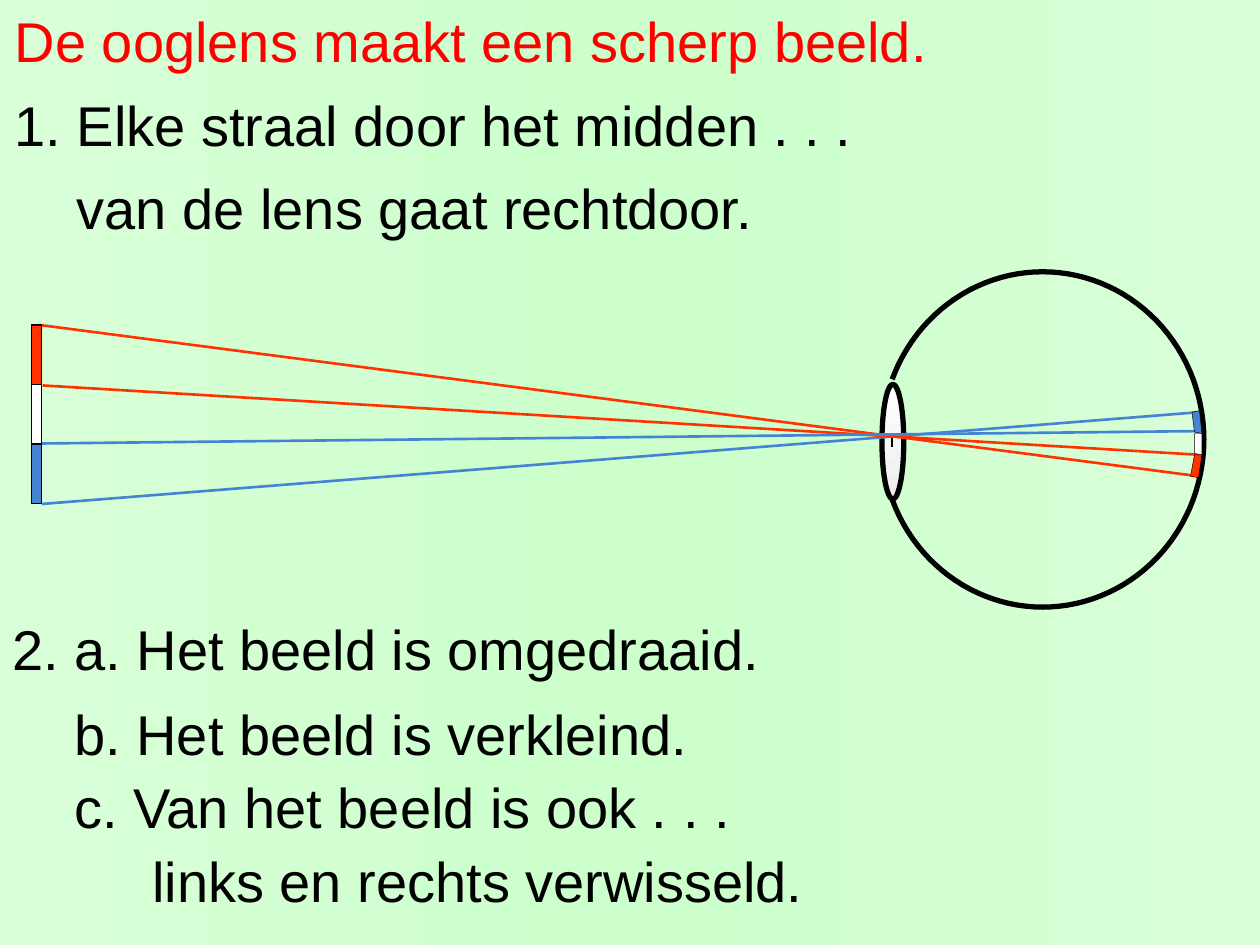
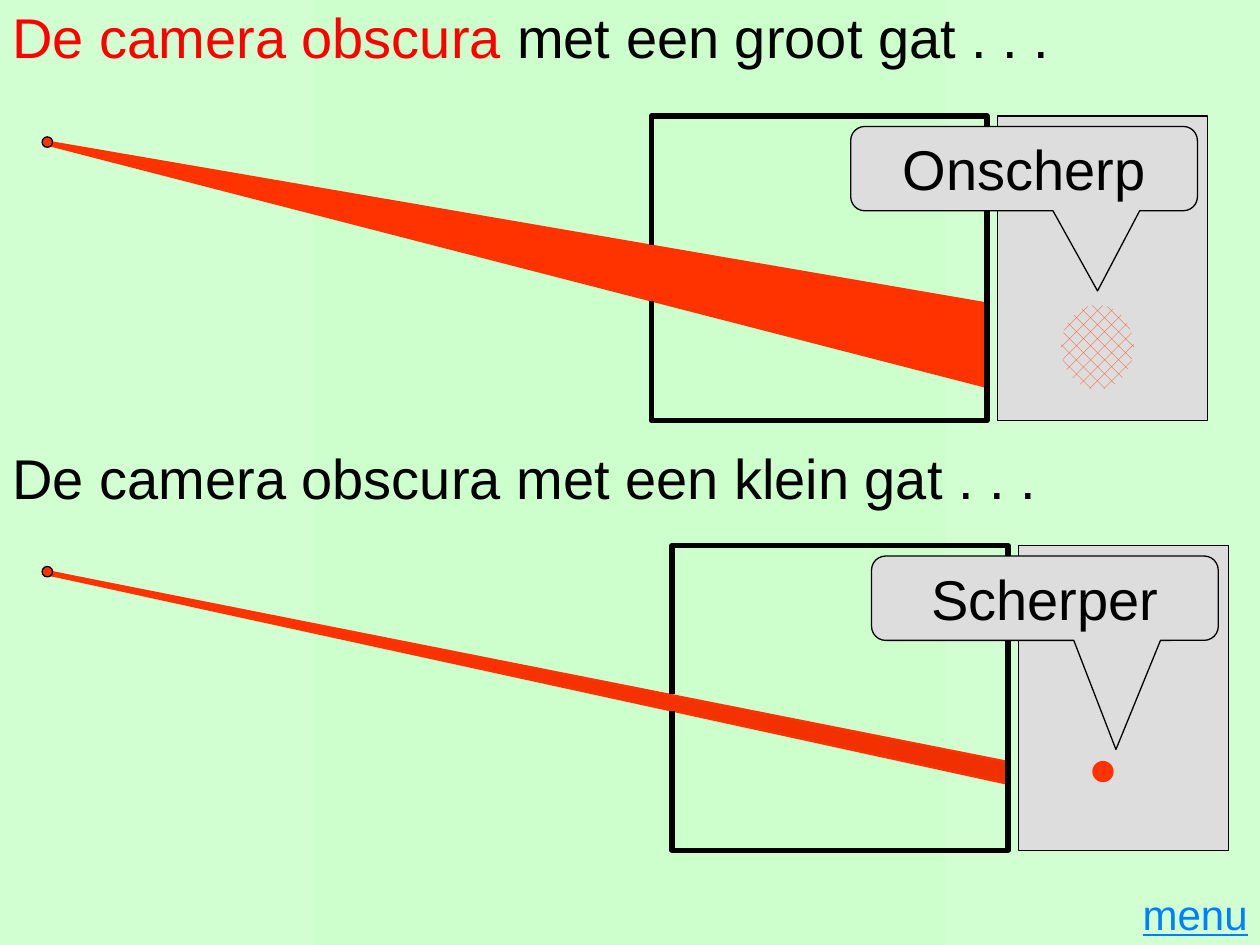
from math import cos, radians, sin

from lxml.etree import SubElement
from pptx import Presentation
from pptx.dml.color import RGBColor as RGB
from pptx.enum.dml import MSO_PATTERN as PATTERN
from pptx.enum.shapes import MSO_CONNECTOR as LINK, MSO_SHAPE as SHAPE
from pptx.enum.text import MSO_ANCHOR as ANCHOR, PP_ALIGN as ALIGN
from pptx.oxml.ns import qn
from pptx.util import Cm, Pt

HUES = {
    "black": "000000", "white": "FFFFFF", "title": "FF0000", "red": "FF3300",
    "blue": "4584D3", "gray": "DDDDDD", "pale": "EDEDED", "link": "0080FF",
    "mint": "CCFFCC", "edge1": "D8FFD8", "edge2": "D1FFD1",
    "deep1": "FC3200", "deep2": "F03000",
}
FONT = "Arial"
WIDE, HIGH = 25.4, 19.05

LINES = [
    (0.05, 0, "De ooglens maakt een scherp beeld.", "title"),
    (0.05, 1.7, "1. Elke straal door het midden . . .", "black"),
    (1.3, 3.38, "van de lens gaat rechtdoor.", "black"),
    (0, 12.27, "2. a. Het beeld is omgedraaid.", "black"),
    (1.25, 13.97, "b. Het beeld is verkleind.", "black"),
    (1.25, 15.44, "c. Van het beeld is ook . . .", "black"),
    (2.82, 16.94, "links en rechts verwisseld.", "black"),
]
EYE = (21.02, 8.86, 3.25, 3.38)
LENS = (17.78, 7.75, 0.44, 2.31)
CROSS = [((17.98, 8.81), (17.98, 9.02)), ((17.88, 8.81), (18.08, 8.81))]
RAYS = [
    ((0.79, 6.55), (24.16, 9.6), "red"),
    ((0.84, 10.16), (24.16, 8.31), "blue"),
    ((0.86, 7.77), (24.21, 9.17), "red"),
    ((0.84, 8.94), (24.21, 8.69), "blue"),
]
BAR = (0.64, 6.55, 0.2, 1.2)
FLAG = ["red", "white", "blue"]
IMAGE = [
    ("red", [(24, 9.6), (24.08, 9.17), (24.23, 9.17), (24.16, 9.63)]),
    ("white", [(24.08, 9.14), (24.08, 8.74), (24.23, 8.74), (24.23, 9.17)]),
    ("blue", [(24.08, 8.71), (24.03, 8.31), (24.18, 8.28), (24.23, 8.74)]),
]

CAMERAS = [
    {"title": [("De camera obscura ", "title"), ("met een groot gat . . .", "black")],
     "head": 0, "left": 13.13, "top": 2.34, "hole": (4.93, 6.07), "hits": (6.15, 7.77),
     "deep": "deep1", "spot": (21.39, 6.15, 1.47, 1.7), "blur": True,
     "label": "Onscherp", "tip": (0.212, 1.451)},
    {"title": [("De camera obscura met een klein gat . . .", "black")],
     "head": 8.89, "left": 13.55, "top": 11, "hole": (14, 14.33), "hits": (15.39, 15.77),
     "deep": "deep2", "spot": (22.02, 15.34, 0.43, 0.43), "blur": False,
     "label": "Scherper", "tip": (0.205, 1.794)},
]
BOX = (6.77, 6.14)
START = 0.97


def hue(name):
    return RGB.from_string(HUES[name])


def blend(fill, first, last, angle):
    fill.gradient()
    fill.gradient_angle = angle
    for stop, name in zip(fill.gradient_stops, (first, last)):
        stop.color.rgb = hue(name)


def page(deck, edge):
    slide = deck.slides.add_slide(deck.slide_layouts[6])
    blend(slide.background.fill, edge, edge, 0)
    stops = slide.element.find(".//" + qn("a:gsLst"))
    mid = SubElement(stops, qn("a:gs"), pos="50000")
    SubElement(mid, qn("a:srgbClr"), val=HUES["mint"])
    stops.insert(1, mid)
    return slide


def style(run, name, size):
    run.font.name = FONT
    run.font.size = Pt(size)
    run.font.color.rgb = hue(name)


def write(slide, area, parts, size=32, anchor=ANCHOR.TOP):
    frame = slide.shapes.add_textbox(*map(Cm, area)).text_frame
    frame.word_wrap = True
    frame.vertical_anchor = anchor
    para = frame.paragraphs[0]
    for text, name in parts:
        run = para.add_run()
        run.text = text
        style(run, name, size)
    return para


def paint(shape, fill=None, line=None, width=0.75):
    shape.shadow.inherit = False
    if fill:
        shape.fill.solid()
        shape.fill.fore_color.rgb = hue(fill)
    else:
        shape.fill.background()
    if line:
        shape.line.color.rgb = hue(line)
        shape.line.width = Pt(width)
    else:
        shape.line.fill.background()
    return shape


def put(slide, kind, area, *look):
    return paint(slide.shapes.add_shape(kind, *map(Cm, area)), *look)


def trace(slide, dots, *look, close=True):
    dots = [(Cm(x), Cm(y)) for x, y in dots]
    form = slide.shapes.build_freeform(*dots[0])
    form.add_line_segments(dots[1:], close=close)
    return paint(form.convert_to_shape(), *look)


def ray(slide, head, tail, name, width):
    line = slide.shapes.add_connector(LINK.STRAIGHT, *map(Cm, head + tail))
    line.line.color.rgb = hue(name)
    line.line.width = Pt(width)
    SubElement(line.element.spPr, qn("a:effectLst"))


def draw_eye(slide):
    midx, midy, radx, rady = EYE
    arc = [(midx + radx * cos(radians(a)), midy + rady * sin(radians(a)))
           for a in range(-159, 160, 3)]
    trace(slide, arc, None, "black", 3, close=False)
    lens = put(slide, SHAPE.OVAL, LENS, "white", "black", 3)
    blend(lens.fill, "white", "pale", 270)
    for head, tail in CROSS:
        ray(slide, head, tail, "black", 0.75)
    for head, tail, name in RAYS:
        ray(slide, head, tail, name, 1.5)
    left, top, wide, high = BAR
    for i, name in enumerate(FLAG):
        put(slide, SHAPE.RECTANGLE, (left, top + i * high, wide, high), name, "black")
    for name, dots in IMAGE:
        trace(slide, dots, name, "black", 0.25)
    for left, top, text, name in LINES:
        write(slide, (left, top, WIDE - left, 1.62), [(text, name)])


def draw_camera(slide, cam):
    left, top = cam["left"], cam["top"]
    wide, high = BOX
    right, base = left + wide, top + high
    start = (START, top + 0.55)
    ends = [(right, y) for y in cam["hits"]]
    write(slide, (0, cam["head"], WIDE, 1.47), cam["title"], anchor=ANCHOR.MIDDLE)
    for end in ends:
        ray(slide, start, end, "red", 3)
    beam = trace(slide, [start] + ends, "red")
    blend(beam.fill, "red", cam["deep"], 0)
    put(slide, SHAPE.OVAL, (0.85, top + 0.42, 0.21, 0.21), "red", "black")
    put(slide, SHAPE.RECTANGLE, (right + 0.21, top, 4.24, high), "gray", "black")
    spot = put(slide, SHAPE.OVAL, cam["spot"], "red")
    if cam["blur"]:
        spot.fill.patterned()
        spot.fill.pattern = PATTERN.PERCENT_25
        spot.fill.fore_color.rgb = hue("red")
        spot.fill.back_color.rgb = hue("gray")
    upper, lower = cam["hole"]
    wall = [(left, upper), (left, top), (right, top), (right, base), (left, base), (left, lower)]
    trace(slide, wall, None, "black", 3, close=False)
    note = put(slide, SHAPE.ROUNDED_RECTANGULAR_CALLOUT,
               (left + 4.02, top + 0.21, 6.99, 1.7), "gray", "black")
    note.adjustments[0], note.adjustments[1] = cam["tip"]
    frame = note.text_frame
    frame.text = cam["label"]
    frame.vertical_anchor = ANCHOR.MIDDLE
    frame.paragraphs[0].alignment = ALIGN.CENTER
    style(frame.paragraphs[0].runs[0], "black", 32)


def main():
    deck = Presentation()
    deck.slide_width, deck.slide_height = Cm(WIDE), Cm(HIGH)
    draw_eye(page(deck, "edge1"))
    slide = page(deck, "edge2")
    for cam in CAMERAS:
        draw_camera(slide, cam)
    menu = write(slide, (22.5, 17.78, 2.9, 1.27), [("menu", "link")], 24)
    menu.alignment = ALIGN.RIGHT
    menu.runs[0].font.underline = True
    deck.save("out.pptx")


if __name__ == "__main__":
    main()
